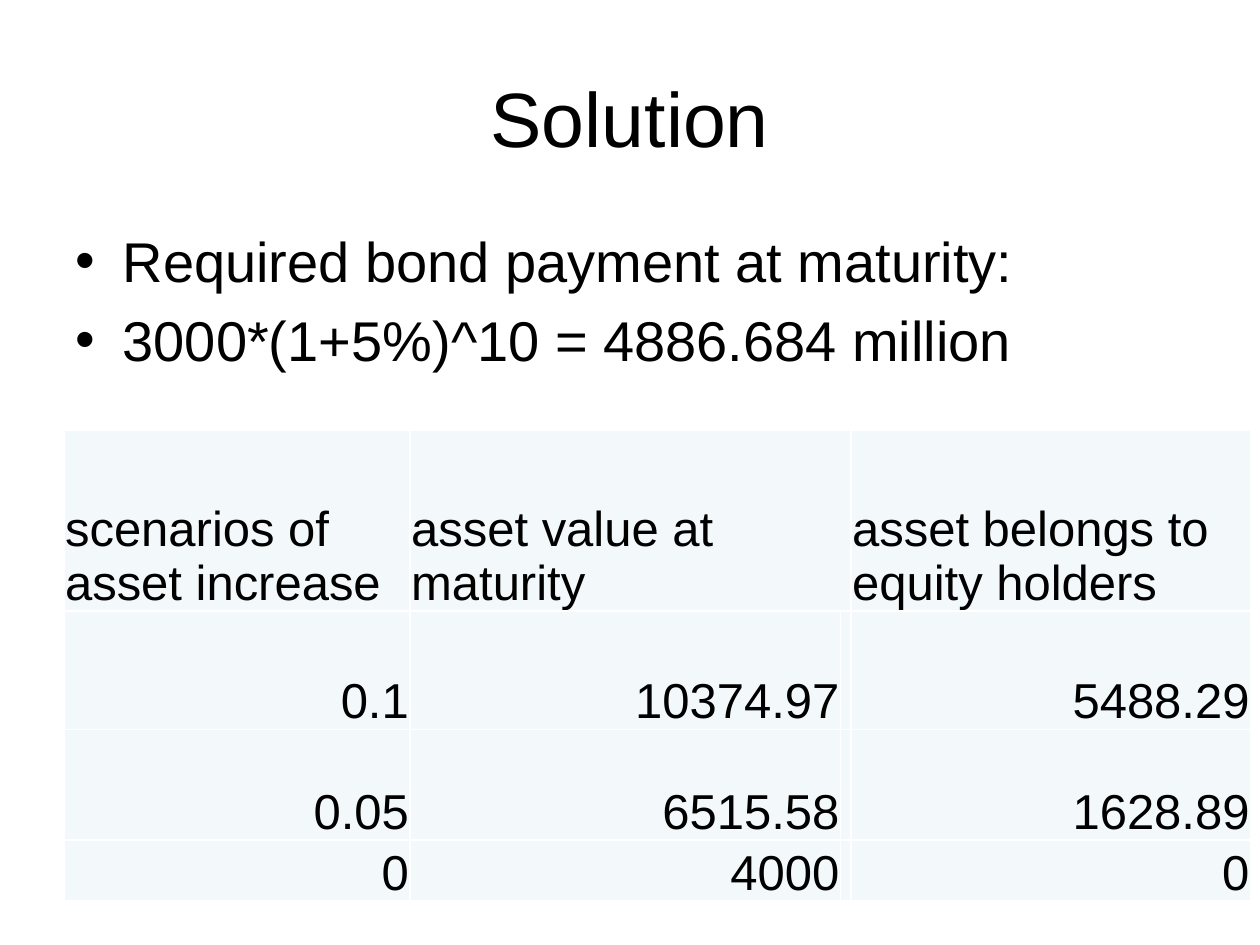
from dataclasses import dataclass

from lxml import etree
from pptx import Presentation
from pptx import util as u
from pptx.dml.color import RGBColor
from pptx.enum import text as t
from pptx.oxml import ns


@dataclass(frozen=True)
class Theme:
    font: str = "Arial"
    ink: str = "000000"
    cell: str = "F3F9FA"
    border: str = "FFFFFF"
    title: int = 44
    body: int = 32
    table: int = 28


def write(frame, lines, theme, size, align=t.PP_ALIGN.LEFT, anchor=t.MSO_ANCHOR.TOP,
          bullet=None, indent=0, before=0):
    frame.word_wrap = True
    frame.vertical_anchor = anchor
    for index, line in enumerate(lines):
        para = frame.paragraphs[0] if index == 0 else frame.add_paragraph()
        para.alignment = align
        para.space_before = u.Pt(before)
        span = para.add_run()
        span.text = line
        span.font.name = theme.font
        span.font.size = u.Pt(size)
        span.font.color.rgb = RGBColor.from_string(theme.ink)
        if bullet:
            props = para._p.get_or_add_pPr()
            props.set("marL", str(u.Pt(indent)))
            props.set("indent", str(-u.Pt(indent)))
            etree.SubElement(props, ns.qn("a:buFont")).set("typeface", theme.font)
            etree.SubElement(props, ns.qn("a:buChar")).set("char", bullet)


class Builder:
    def __init__(self, theme, page):
        self.theme = theme
        self.page = page

    def textbox(self, place, lines, size, **style):
        box = self.page.shapes.add_textbox(*map(u.Pt, place))
        write(box.text_frame, lines, self.theme, size, **style)

    def borders(self, cell):
        props = cell._tc.get_or_add_tcPr()
        for index, side in enumerate(("lnL", "lnR", "lnT", "lnB")):
            line = etree.Element(ns.qn(f"a:{side}"), w=str(u.Pt(1)))
            fill = etree.SubElement(line, ns.qn("a:solidFill"))
            etree.SubElement(fill, ns.qn("a:srgbClr")).set("val", self.theme.border)
            props.insert(index, line)

    def cell(self, cell, words, align):
        cell.margin_left = cell.margin_right = cell.margin_top = u.Pt(0.72)
        cell.margin_bottom = 0
        cell.vertical_anchor = t.MSO_ANCHOR.BOTTOM
        cell.fill.solid()
        cell.fill.fore_color.rgb = RGBColor.from_string(self.theme.cell)
        self.borders(cell)
        if words:
            write(cell.text_frame, [words], self.theme, self.theme.table,
                  align=align, anchor=t.MSO_ANCHOR.BOTTOM)

    def table(self, left, top, widths, heights, rows):
        place = (left, top, sum(widths), sum(heights))
        grid = self.page.shapes.add_table(len(rows), len(widths), *map(u.Pt, place)).table
        for column, width in zip(grid.columns, widths):
            column.width = u.Pt(width)
        for row, height in zip(grid.rows, heights):
            row.height = u.Pt(height)
        for r, row in enumerate(rows):
            align = t.PP_ALIGN.RIGHT if r else t.PP_ALIGN.LEFT
            for c, words in enumerate(row):
                self.cell(grid.cell(r, c), words, align)
        grid.cell(0, 1).merge(grid.cell(0, 2))


def main():
    theme = Theme()
    deck = Presentation()
    deck.slide_width, deck.slide_height = u.Pt(720), u.Pt(540)
    page = deck.slides.add_slide(deck.slide_layouts[6])
    builder = Builder(theme, page)

    builder.textbox((36, 21.6, 648, 90), ["Solution"], theme.title,
                    align=t.PP_ALIGN.CENTER, anchor=t.MSO_ANCHOR.MIDDLE)
    builder.textbox((36, 126, 648, 356.4),
                    ["Required bond payment at maturity:",
                     "3000*(1+5%)^10 = 4886.684 million"],
                    theme.body, bullet="•", indent=27, before=6.4)
    builder.table(36.5, 245.8, (197.8, 246, 6, 228.4), (103.4, 67.6, 63.4, 34.6), [
        ("scenarios of asset increase", "asset value at maturity", "",
         "asset belongs to equity holders"),
        ("0.1", "10374.97", "", "5488.29"),
        ("0.05", "6515.58", "", "1628.89"),
        ("0", "4000", "", "0"),
    ])
    deck.save("out.pptx")


if __name__ == "__main__":
    main()
